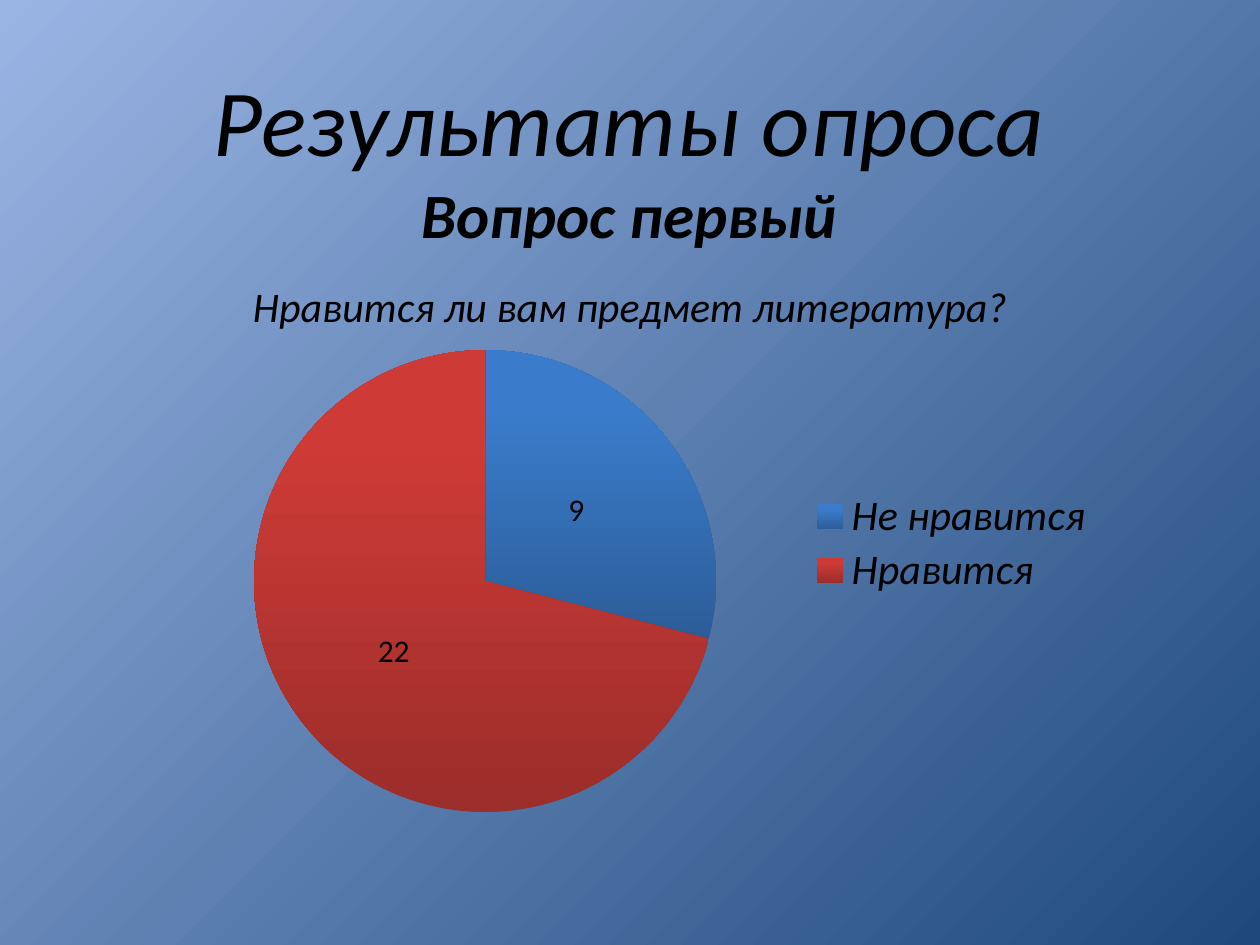
from dataclasses import dataclass
from typing import Any

from lxml.etree import SubElement
from pptx import Presentation
from pptx.chart.data import CategoryChartData
from pptx.dml.color import RGBColor
from pptx.enum.chart import XL_CHART_TYPE, XL_LABEL_POSITION, XL_LEGEND_POSITION
from pptx.enum.text import MSO_ANCHOR, MSO_AUTO_SIZE, PP_ALIGN
from pptx.oxml.ns import qn
from pptx.util import Pt


@dataclass
class Heading:
    text: str
    size: float
    bold: bool


@dataclass
class Answer:
    name: str
    votes: int
    dark: str
    light: str


HEADINGS = [
    Heading("Результаты опроса", 54, False),
    Heading("Вопрос первый", 36, True),
]
QUESTION = "Нравится ли вам предмет литература?"
ANSWERS = [
    Answer("Не нравится", 9, "2C5D98", "3A7CCB"),
    Answer("Нравится", 22, "9B2D2A", "CE3B37"),
]


def color(value: str) -> RGBColor:
    return RGBColor.from_string(value)


def set_font(font: Any, size: float, bold: bool = False, italic: bool = True) -> None:
    formats = {"name": "Calibri", "size": Pt(size), "bold": bold, "italic": italic}
    for key, value in formats.items():
        setattr(font, key, value)
    font.color.rgb = color("000000")


def fill_gradient(fill: Any, angle: float, stops: list[tuple[float, str]]) -> None:
    fill.gradient()
    fill.gradient_angle = angle
    for stop, (position, value) in zip(fill.gradient_stops, stops):
        stop.position = position
        stop.color.rgb = color(value)


def place_part(part: Any, index: int, inner: bool, **fractions: float) -> None:
    for existing in part.findall(qn("c:layout")):
        part.remove(existing)
    layout = SubElement(part, qn("c:layout"))
    part.insert(index, layout)
    manual = SubElement(layout, qn("c:manualLayout"))
    settings = {"layoutTarget": "inner"} if inner else {}
    settings |= {"xMode": "edge", "yMode": "edge"}
    settings |= {key: str(value) for key, value in fractions.items()}
    for key, value in settings.items():
        SubElement(manual, qn(f"c:{key}")).set("val", value)


def write_headings(box: Any) -> None:
    place = {"left": 76.3, "top": 31.7, "width": 566.6, "height": 116.6}
    for key, value in place.items():
        setattr(box, key, Pt(value))
    frame = box.text_frame
    formats = {
        "word_wrap": True,
        "auto_size": MSO_AUTO_SIZE.NONE,
        "vertical_anchor": MSO_ANCHOR.TOP,
    }
    for key, value in formats.items():
        setattr(frame, key, value)
    for index, heading in enumerate(HEADINGS):
        para = frame.add_paragraph() if index else frame.paragraphs[0]
        para.alignment = PP_ALIGN.CENTER
        span = para.add_run()
        span.text = heading.text
        set_font(span.font, heading.size, heading.bold)


def add_pie(page: Any) -> None:
    data = CategoryChartData()
    data.categories = [answer.name for answer in ANSWERS]
    data.add_series("Series 1", [answer.votes for answer in ANSWERS])
    chart = page.shapes.add_chart(
        XL_CHART_TYPE.PIE, Pt(0), Pt(144), Pt(720), Pt(330), data
    ).chart
    set_font(chart.font, 18, italic=False)

    chart.has_title = True
    span = chart.chart_title.text_frame.paragraphs[0].add_run()
    span.text = QUESTION
    set_font(span.font, 24)
    chart.chart_title.include_in_layout = False

    chart.has_legend = True
    legend = chart.legend
    legend.position = XL_LEGEND_POSITION.RIGHT
    legend.include_in_layout = False
    set_font(legend.font, 24)
    place_part(legend._element, 1, False, x=0.64, y=0.41, w=0.23, h=0.19)
    place_part(chart._chartSpace.chart.plotArea, 0, True, x=0.2, y=0.17, w=0.37, h=0.8)

    plot = chart.plots[0]
    plot.vary_by_categories = True
    plot.has_data_labels = True
    labels = plot.data_labels
    formats = {
        "show_value": True,
        "show_percentage": False,
        "position": XL_LABEL_POSITION.CENTER,
    }
    for key, value in formats.items():
        setattr(labels, key, value)
    set_font(labels.font, 18, italic=False)
    for index, answer in enumerate(ANSWERS):
        point = plot.series[0].points[index]
        fill_gradient(point.format.fill, 90, [(0, answer.dark), (0.8, answer.light)])
        point.format.line.fill.background()


def main() -> None:
    deck = Presentation()
    deck.slide_width, deck.slide_height = Pt(720), Pt(540)
    page = deck.slides.add_slide(deck.slide_layouts[5])
    fill_gradient(page.background.fill, 315, [(0, "9AB5E4"), (1, "1F497D")])
    write_headings(page.shapes.title)
    add_pie(page)
    deck.save("out.pptx")


if __name__ == "__main__":
    main()
